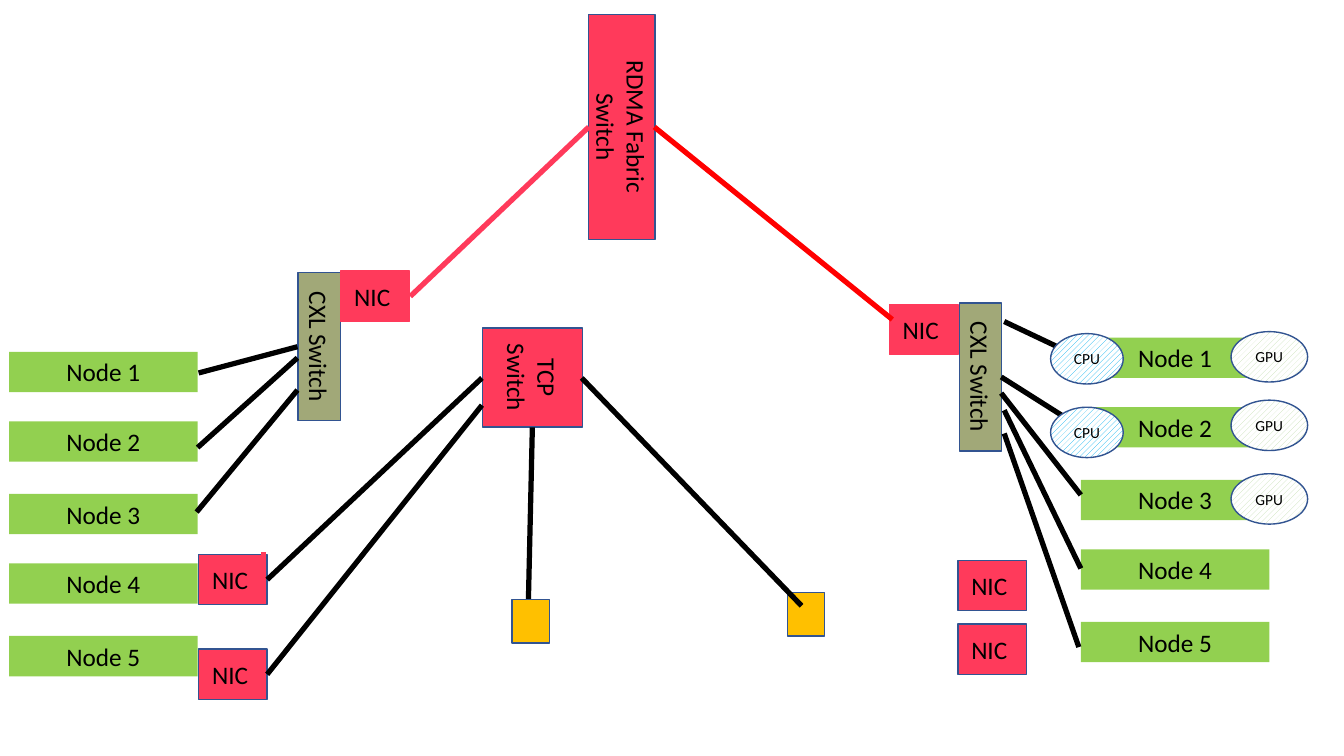
from dataclasses import dataclass

from lxml import etree
from pptx import Presentation
from pptx.dml.color import RGBColor
from pptx.enum.dml import MSO_PATTERN as Pattern
from pptx.enum.shapes import MSO_CONNECTOR as Connector, MSO_SHAPE as Shape
from pptx.enum.text import MSO_ANCHOR as Anchor, MSO_AUTO_SIZE as AutoSize, PP_ALIGN as Align
from pptx.oxml.ns import qn
from pptx.util import Inches, Pt

BLACK, WHITE, NAVY = "000000", "FFFFFF", "325491"
GREEN, OLIVE, PINK, RED, AMBER = "92D050", "A1A878", "FF3A5B", "FF0000", "FFC000"
SKY, MINT = "00B0F0", "C5E0B4"


@dataclass
class Box:
    left: float
    top: float
    width: float
    height: float
    fill: str
    text: str = ""
    line: str | None = NAVY
    rotation: int = 0
    size: int = 18
    kind: Shape = Shape.RECTANGLE
    hatched: bool = False
    anchor: Anchor = Anchor.MIDDLE
    grow: bool = False


@dataclass
class Link:
    x1: float
    y1: float
    x2: float
    y2: float
    color: str = BLACK


def rgb(color: str) -> RGBColor:
    return RGBColor.from_string(color)


def node(left: float, top: float, number: int) -> Box:
    return Box(left, top, 1.87, 0.4, GREEN, f"Node {number}", line=None,
               anchor=Anchor.TOP, grow=True)


def nic(left: float, top: float, line: str = NAVY) -> Box:
    return Box(left, top, 0.68, 0.5, PINK, "NIC ", line)


def cxl_switch(left: float, top: float) -> Box:
    return Box(left, top, 1.47, 0.42, OLIVE, "CXL Switch", rotation=90)


def endpoint(left: float, top: float) -> Box:
    return Box(left, top, 0.37, 0.43, AMBER)


def processor(left: float, top: float, width: float, name: str, color: str) -> Box:
    return Box(left, top, width, 0.5, color, name, size=11, kind=Shape.OVAL, hatched=True)


def draw_box(s, box: Box) -> None:
    sp = s.shapes.add_shape(box.kind, Inches(box.left), Inches(box.top),
                            Inches(box.width), Inches(box.height))
    sp.shadow.inherit = False
    sp.rotation = box.rotation
    if box.hatched:
        sp.fill.patterned()
        sp.fill.pattern = Pattern.WIDE_UPWARD_DIAGONAL
        sp.fill.fore_color.rgb = rgb(box.fill)
        sp.fill.back_color.rgb = rgb(WHITE)
    else:
        sp.fill.solid()
        sp.fill.fore_color.rgb = rgb(box.fill)
    if box.line:
        sp.line.color.rgb = rgb(box.line)
        sp.line.width = Pt(1)
    else:
        sp.line.fill.background()
    if not box.text:
        return
    tf = sp.text_frame
    tf.word_wrap = True
    tf.vertical_anchor = box.anchor
    if box.grow:
        tf.auto_size = AutoSize.SHAPE_TO_FIT_TEXT
    p = tf.paragraphs[0]
    p.alignment = Align.CENTER
    r = p.add_run()
    r.text = box.text
    r.font.name = "Calibri"
    r.font.size = Pt(box.size)
    r.font.color.rgb = rgb(BLACK)


def draw_link(s, link: Link) -> None:
    cx = s.shapes.add_connector(Connector.STRAIGHT, Inches(link.x1), Inches(link.y1),
                                Inches(link.x2), Inches(link.y2))
    cx.line.color.rgb = rgb(link.color)
    cx.line.width = Pt(3.75)
    etree.SubElement(cx._element.spPr, qn("a:effectLst"))


# Nodes: both columns share one vertical rhythm
NODE_OFFSETS = (0, 0.69, 1.41, 2.1, 2.82)
NODES = [node(left, top + offset, number)
         for left, top in ((0.09, 3.49), (10.72, 3.35))
         for number, offset in enumerate(NODE_OFFSETS, 1)]

# Switches, network cards and the endpoint below the right-hand link
DEVICES = [
    cxl_switch(2.43, 3.23),
    cxl_switch(8.99, 3.53),
    Box(5.05, 0.93, 2.23, 0.66, PINK, "RDMA Fabric Switch", rotation=90),
    Box(4.79, 3.25, 0.98, 0.99, PINK, "TCP Switch", rotation=90),
    nic(1.97, 5.5),
    nic(1.97, 6.44),
    nic(3.38, 2.69, PINK),
    nic(8.82, 3.02, PINK),
    nic(9.5, 5.56),
    nic(9.5, 6.19),
    endpoint(7.81, 5.88),
]

LINKS = [
    # Left CXL switch to nodes
    Link(2.95, 3.87, 1.95, 5.08),
    Link(2.95, 3.55, 1.96, 4.44),
    Link(2.95, 3.44, 1.97, 3.7),
    # RDMA fabric
    Link(5.84, 1.26, 4.07, 2.94, PINK),
    Link(2.61, 5.48, 2.61, 5.58, PINK),
    Link(8.85, 3.17, 6.49, 1.26, RED),
    # Right CXL switch to nodes
    Link(10.72, 3.55, 9.96, 3.19),
    Link(10.72, 4.24, 9.93, 3.74),
    Link(10.72, 4.91, 9.93, 3.9),
    Link(10.72, 5.64, 9.96, 4.07),
    Link(9.96, 4.3, 10.7, 6.42),
    # TCP switch
    Link(4.78, 3.75, 2.65, 5.75),
    Link(4.78, 4.02, 2.65, 6.69),
    Link(5.28, 4.24, 5.24, 6),
    Link(5.77, 3.75, 7.95, 6.01),
]

# Parts that lie over the links
CPUS = [processor(10.42, top, 0.72, "CPU", SKY) for top in (3.31, 4.04)]
GPUS = [processor(12.21, top, 0.76, "GPU", MINT) for top in (3.29, 3.97, 4.7)]


def main() -> None:
    prs = Presentation()
    prs.slide_width, prs.slide_height = Inches(13.33), Inches(7.5)
    s = prs.slides.add_slide(prs.slide_layouts[6])
    for box in NODES + DEVICES:
        draw_box(s, box)
    for link in LINKS:
        draw_link(s, link)
    for box in CPUS + GPUS + [endpoint(5.08, 5.95)]:
        draw_box(s, box)
    prs.save("out.pptx")


if __name__ == "__main__":
    main()
